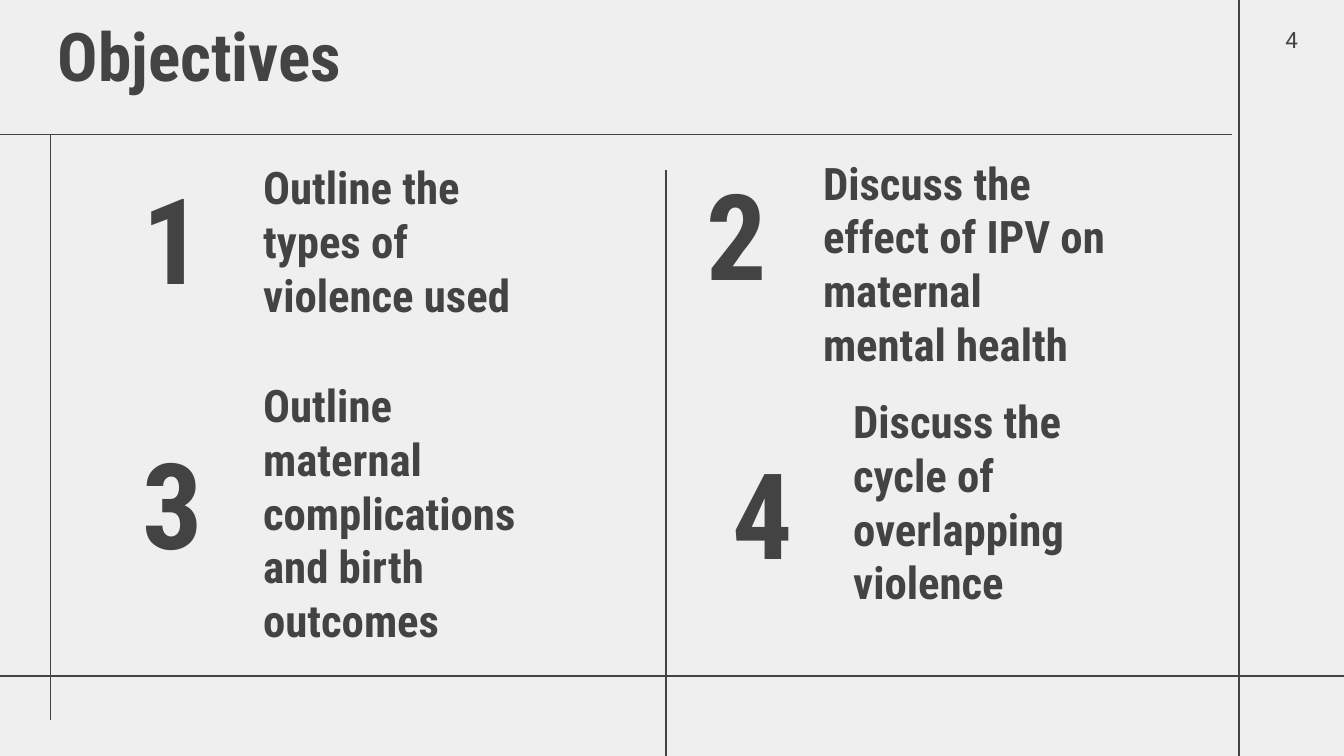
"""Build the Objectives slide: a ruled page with four numbered goals."""
from lxml.etree import SubElement
from pptx import Presentation
from pptx.dml.color import RGBColor
from pptx.enum.shapes import MSO_CONNECTOR
from pptx.enum.text import MSO_ANCHOR, MSO_AUTO_SIZE, PP_ALIGN
from pptx.oxml.ns import qn
from pptx.util import Pt

PX = 4572
COLORS = {"paper": "EFEFEF", "ink": "434343"}


def write_text(shape, text, box, size=24, font="Roboto Condensed", bold=True, align=PP_ALIGN.LEFT):
    shape.left, shape.top, shape.width, shape.height = [value * PX for value in box]
    frame = shape.text_frame
    frame.word_wrap = True
    frame.auto_size = MSO_AUTO_SIZE.NONE
    frame.vertical_anchor = MSO_ANCHOR.MIDDLE
    frame.margin_left = frame.margin_right = 20 * PX
    frame.margin_top = frame.margin_bottom = 20 * PX
    paragraph = frame.paragraphs[0]
    paragraph.alignment = align
    run = paragraph.add_run()
    run.text = text
    run.font.name = font
    run.font.size = Pt(size)
    run.font.bold = bold
    run.font.color.rgb = RGBColor.from_string(COLORS["ink"])


presentation = Presentation()
presentation.slide_width = 2000 * PX
presentation.slide_height = 1125 * PX
slide = presentation.slides.add_slide(presentation.slide_layouts[5])
slide.background.fill.solid()
slide.background.fill.fore_color.rgb = RGBColor.from_string(COLORS["paper"])

rules = [
    (2014, 1006, -14, 1006),
    (1844, -12, 1844, 1136),
    (1833, 200, -16, 200),
    (991, 1126, 991, 253),
    (75, 1072, 75, 200),
]
for rule in rules:
    line = slide.shapes.add_connector(MSO_CONNECTOR.STRAIGHT, *[value * PX for value in rule])
    line.line.color.rgb = RGBColor.from_string(COLORS["ink"])
    line.line.width = Pt(0.75)
    SubElement(line._element.spPr, qn("a:effectLst"))

write_text(slide.shapes.title, "Objectives", (66, 18, 1686, 126), size=36)

objectives = [
    ("1", (182, 282, 150, 142), "Outline the types of violence used", (372, 287, 472, 142)),
    ("2", (1026, 275, 140, 142), "Discuss the effect of IPV on maternal mental health", (1205, 320, 470, 142)),
    ("3", (182, 675, 150, 142), "Outline maternal complications and birth outcomes", (372, 691, 472, 142)),
    ("4", (1065, 691, 140, 142), "Discuss the cycle of overlapping violence", (1250, 675, 474, 142)),
]
for number, number_box, objective, objective_box in objectives:
    number_shape = slide.shapes.add_textbox(0, 0, PX, PX)
    write_text(number_shape, number, number_box, size=64, align=PP_ALIGN.CENTER)
    objective_shape = slide.shapes.add_textbox(0, 0, PX, PX)
    write_text(objective_shape, objective, objective_box)

page_number = slide.shapes.add_textbox(0, 0, PX, PX)
write_text(page_number, "4", (1868, 18, 108, 82), size=12, font="Roboto", bold=False, align=PP_ALIGN.CENTER)

presentation.save("out.pptx")
